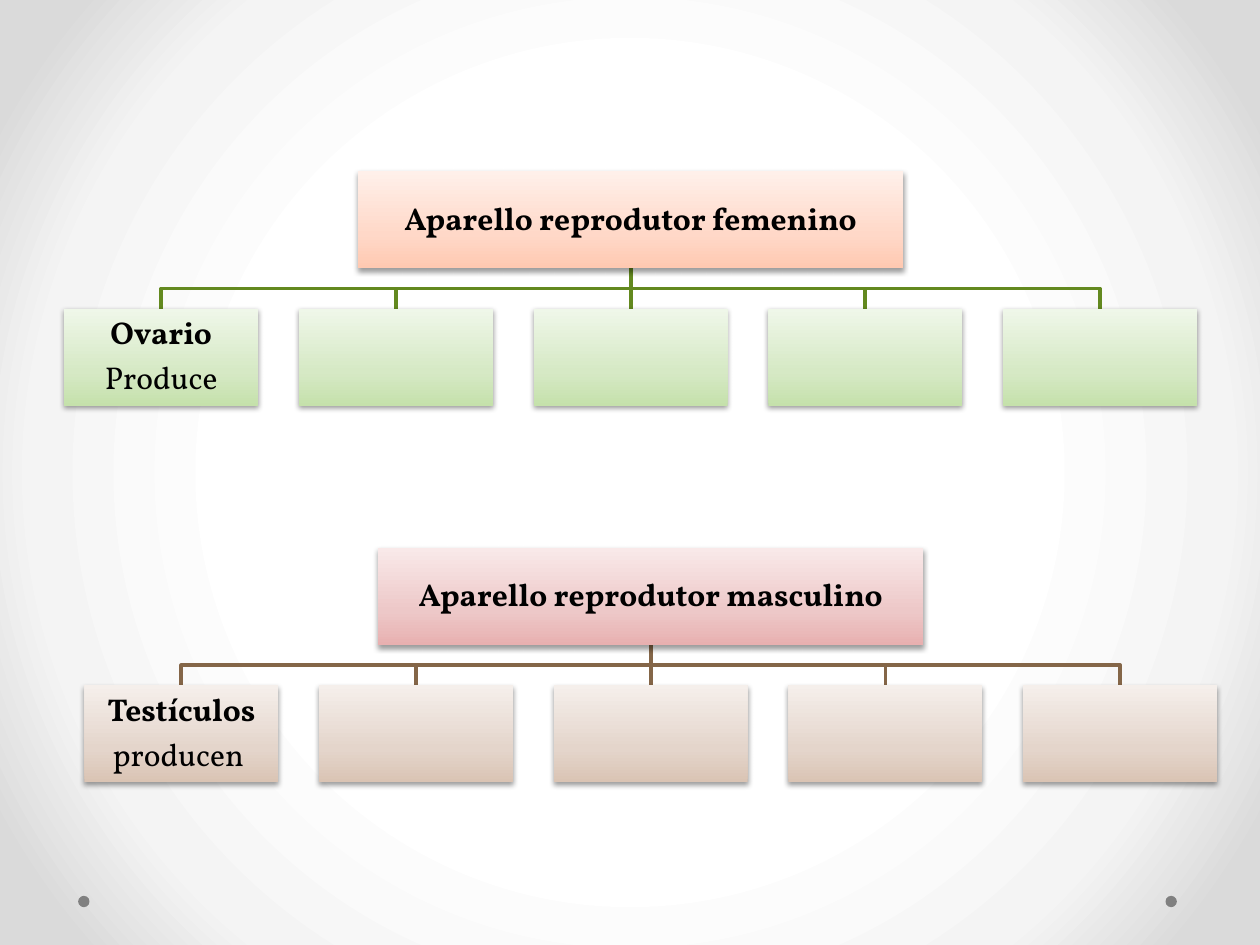
from lxml.etree import SubElement
from pptx import Presentation
from pptx.dml.color import RGBColor
from pptx.enum.shapes import MSO_CONNECTOR, MSO_SHAPE
from pptx.enum.text import MSO_ANCHOR, PP_ALIGN
from pptx.oxml import parse_xml
from pptx.oxml.ns import nsdecls, qn
from pptx.util import Inches, Pt

BLACK = RGBColor(0x00, 0x00, 0x00)
DOT_GRAY = RGBColor(0x80, 0x80, 0x80)
GREEN_LINE = RGBColor(0x63, 0x89, 0x1F)
BROWN_LINE = RGBColor(0x84, 0x66, 0x48)


def stops(positions, *colors):
    return list(zip(positions, map(RGBColor.from_string, colors)))


BACKDROP = stops((50, 76, 92), "FFFFFF", "F4F4F4", "DADADA")
BOX_POSITIONS = (0, 35, 100)
ORANGE = stops(BOX_POSITIONS, "FFC9B1", "FFD8C8", "FFF0EA")
GREEN = stops(BOX_POSITIONS, "C5E1AB", "D6E9C5", "EFF7E9")
RED = stops(BOX_POSITIONS, "E8B0B0", "EDC8C8", "F9E9E9")
BROWN = stops(BOX_POSITIONS, "DAC4B4", "E4D5CB", "F5EFEB")

TREE_WIDTH = Inches(8.99)
ROOT_WIDTH = Inches(4.33)
CHILD_WIDTH = Inches(1.54)
BOX_HEIGHT = Inches(0.77)
LEVEL_GAP = Inches(0.32)
CHILD_COUNT = 5

FONT = {"name": "Vollkorn", "size": Pt(18)}
FRAME = {"word_wrap": True, "vertical_anchor": MSO_ANCHOR.MIDDLE,
         **{f"margin_{side}": Inches(0.01) for side in ("left", "top", "right", "bottom")}}
PARAGRAPH = {"alignment": PP_ALIGN.CENTER, "line_spacing": 0.9, "space_after": Pt(6.3)}

SHADOW = (f'<a:effectLst {nsdecls("a")}><a:outerShdw blurRad="{Pt(3.1)}" dist="{Pt(1.6)}" '
          'dir="5400000" rotWithShape="0"><a:srgbClr val="000000"><a:alpha val="38000"/>'
          '</a:srgbClr></a:outerShdw></a:effectLst>')


def set_format(target, values):
    for name, value in values.items():
        setattr(target, name, value)


def apply_gradient(fill, element, gradient_stops):
    """Give the fill its stops and return the gradient element."""
    fill.gradient()
    gradient = element.xpath(".//a:gradFill")[0]
    stop_list = gradient.find(qn("a:gsLst"))
    for old_stop in list(stop_list):
        stop_list.remove(old_stop)
    for position, color in gradient_stops:
        stop = SubElement(stop_list, qn("a:gs"), pos=str(position * 1000))
        SubElement(stop, qn("a:srgbClr"), val=str(color))
    return gradient


def paint_background(slide):
    gradient = apply_gradient(slide.background.fill, slide.element, BACKDROP)
    gradient.remove(gradient.find(qn("a:lin")))
    circle = SubElement(gradient, qn("a:path"), path="circle")
    SubElement(circle, qn("a:fillToRect"), l="50000", t="50000", r="50000", b="50000")


def add_dots(slide, left, top, width, size):
    for dot_left in (left, left + width - size):
        dot = slide.shapes.add_shape(MSO_SHAPE.OVAL, dot_left, top, size, size)
        dot.shadow.inherit = False
        dot.fill.solid()
        dot.fill.fore_color.rgb = DOT_GRAY
        dot.line.fill.background()


def add_box(slide, left, top, width, gradient_stops, lines):
    """Add a shaded box; its first line of text is bold."""
    box = slide.shapes.add_shape(MSO_SHAPE.RECTANGLE, left, top, width, BOX_HEIGHT)
    box.line.fill.background()
    apply_gradient(box.fill, box.element, gradient_stops)
    box.fill.gradient_angle = 90
    box.element.spPr.append(parse_xml(SHADOW))
    frame = box.text_frame
    set_format(frame, FRAME)
    for index, text in enumerate(lines):
        paragraph = frame.add_paragraph() if index else frame.paragraphs[0]
        set_format(paragraph, PARAGRAPH)
        run = paragraph.add_run()
        run.text = text
        set_format(run.font, {**FONT, "bold": index == 0})
        run.font.color.rgb = BLACK
    return box


def style_line(shape, color):
    shape.line.color.rgb = color
    shape.line.width = Pt(2.25)


def add_elbow(slide, start_x, start_y, end_x, end_y, color):
    middle_y = (start_y + end_y) // 2
    builder = slide.shapes.build_freeform(start_x, start_y)
    builder.add_line_segments([(start_x, middle_y), (end_x, middle_y), (end_x, end_y)],
                              close=False)
    elbow = builder.convert_to_shape()
    elbow.shadow.inherit = False
    elbow.fill.background()
    style_line(elbow, color)


def add_tree(slide, left, top, root_text, child_lines, root_fill, child_fill, line_color):
    center = left + TREE_WIDTH // 2
    root_bottom = top + BOX_HEIGHT
    child_top = root_bottom + LEVEL_GAP
    pitch = (TREE_WIDTH - CHILD_WIDTH) // (CHILD_COUNT - 1)
    child_lefts = [left + index * pitch for index in range(CHILD_COUNT)]
    middle = CHILD_COUNT // 2

    for index, child_left in enumerate(child_lefts):
        if index != middle:
            add_elbow(slide, center, root_bottom, child_left + CHILD_WIDTH // 2,
                      child_top, line_color)
    stem = slide.shapes.add_connector(MSO_CONNECTOR.STRAIGHT, center, root_bottom,
                                      center, child_top)
    style_line(stem, line_color)
    SubElement(stem.element.spPr, qn("a:effectLst"))

    root = add_box(slide, center - ROOT_WIDTH // 2, top, ROOT_WIDTH, root_fill, [root_text])
    children = [add_box(slide, child_left, child_top, CHILD_WIDTH, child_fill,
                        [] if index else child_lines)
                for index, child_left in enumerate(child_lefts)]
    stem.begin_connect(root, 2)
    stem.end_connect(children[middle], 0)


def main():
    presentation = Presentation()
    presentation.slide_width = Inches(10)
    presentation.slide_height = Inches(7.5)
    slide = presentation.slides.add_slide(presentation.slide_layouts[6])
    paint_background(slide)
    add_dots(slide, Inches(0.62), Inches(7.11), Inches(8.72), Inches(0.09))
    add_tree(slide, Inches(0.51), Inches(1.36), "Aparello reprodutor femenino",
             ["Ovario", "Produce"], ORANGE, GREEN, GREEN_LINE)
    add_tree(slide, Inches(0.67), Inches(4.35), "Aparello reprodutor masculino",
             ["Testículos", "producen "], RED, BROWN, BROWN_LINE)
    presentation.save("out.pptx")


if __name__ == "__main__":
    main()
